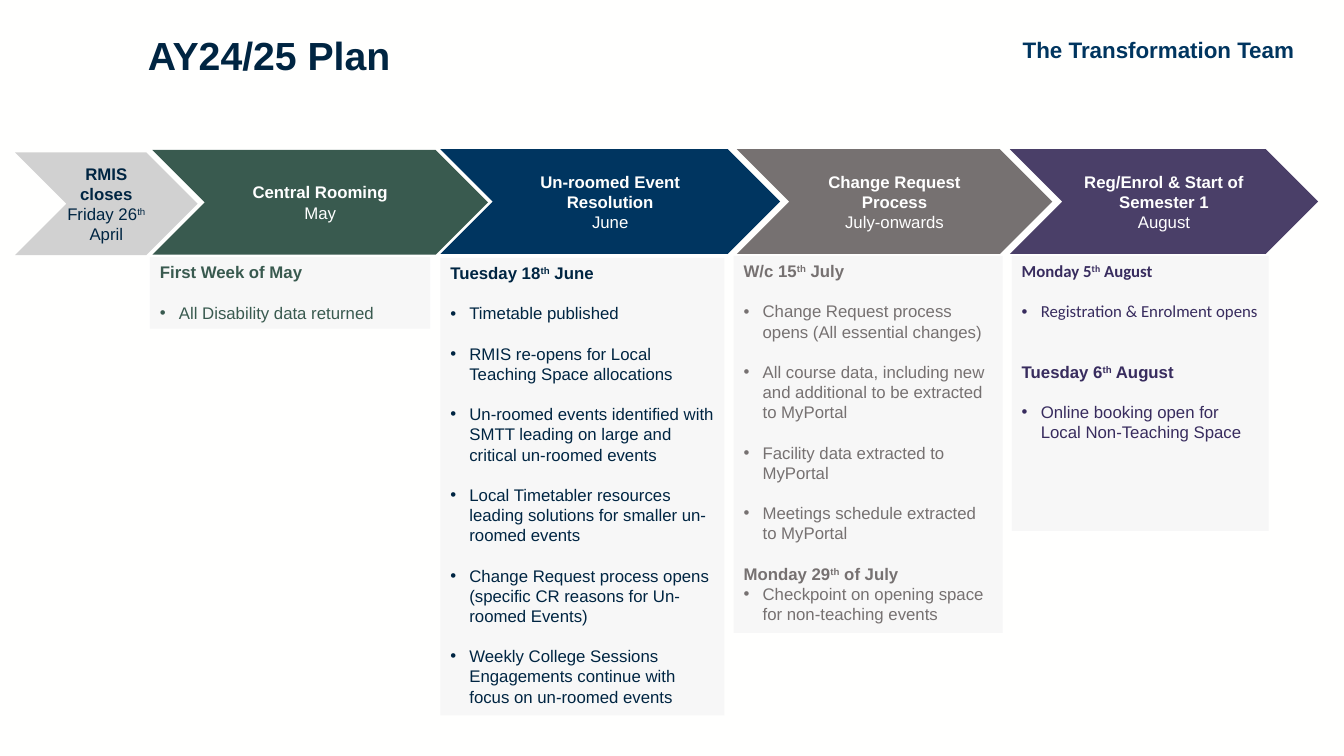
from typing import NamedTuple

from lxml import etree
from pptx import Presentation
from pptx.dml.color import RGBColor
from pptx.enum.shapes import MSO_SHAPE
from pptx.enum.text import MSO_ANCHOR, PP_ALIGN
from pptx.oxml.ns import qn
from pptx.util import Cm, Pt

CHEVRON, RECT = MSO_SHAPE.CHEVRON, MSO_SHAPE.RECTANGLE
TOP, MIDDLE = MSO_ANCHOR.TOP, MSO_ANCHOR.MIDDLE
LEFT, CENTER = PP_ALIGN.LEFT, PP_ALIGN.CENTER

PAPER, PANEL = "FFFFFE", "F7F7F7"
NAVY, BLUE, GREEN = "002542", "003560", "395A4F"
GREY, PURPLE, INDIGO = "767171", "4A3F68", "382C5E"
LINE = 14.4  # height of one text line in points
HANG = Cm(0.48)


class Box(NamedTuple):
    left: float
    top: float
    width: float
    height: float


class Step(NamedTuple):
    box: Box
    fill: str
    ink: str
    title: str
    date: str
    inset: float | None = None


class Line(NamedTuple):
    text: str  # text between carets is superscript
    head: bool = False
    gap: int = 1  # empty lines above
    font: str = "Arial"


class Panel(NamedTuple):
    box: Box
    ink: str
    lines: list[Line]


STEPS = [
    Step(Box(11.1, 3.76, 8.56, 2.64), BLUE, PAPER, "Un-roomed Event Resolution", "June"),
    Step(Box(18.57, 3.76, 7.95, 2.64), GREY, "FFFFFF", "Change Request Process", "July-onwards"),
    Step(Box(0.38, 3.84, 4.6, 2.59), "D1D1D1", NAVY, "RMIS closes", "Friday 26^th ^April", 0),
    Step(Box(3.84, 3.78, 8.46, 2.64), GREEN, "FFFFFF", "Central Rooming", "May"),
    Step(Box(25.45, 3.76, 7.77, 2.64), PURPLE, "FFFFFF", "Reg/Enrol & Start of Semester 1", "August"),
]

PANELS = [
    Panel(Box(3.78, 6.48, 7.06, 1.8), GREEN, [
        Line("First Week of May", True),
        Line("All Disability data returned"),
    ]),
    Panel(Box(11.1, 6.5, 7.16, 11.53), NAVY, [
        Line("Tuesday 18^th^ June", True),
        Line("Timetable published"),
        Line("RMIS re-opens for Local Teaching Space allocations"),
        Line("Un-roomed events identified with SMTT leading on large and critical un-roomed events"),
        Line("Local Timetabler resources leading solutions for smaller un-roomed events"),
        Line("Change Request process opens (specific CR reasons for Un-roomed Events)"),
        Line("Weekly College Sessions Engagements continue with focus on un-roomed events"),
    ]),
    Panel(Box(18.49, 6.45, 6.78, 9.5), GREY, [
        Line("W/c 15^th^ July", True),
        Line("Change Request process opens (All essential changes)"),
        Line("All course data, including new and additional to be extracted to MyPortal"),
        Line("Facility data extracted to MyPortal"),
        Line("Meetings schedule extracted to MyPortal"),
        Line("Monday 29^th^ of July", True),
        Line("Checkpoint on opening space for non-teaching events", gap=0),
    ]),
    Panel(Box(25.5, 6.45, 6.47, 6.93), INDIGO, [
        Line("Monday 5^th^ August", True, font="Calibri"),
        Line("Registration & Enrolment opens", font="Calibri"),
        Line("Tuesday 6^th^ August", True, gap=2),
        Line("Online booking open for Local Non-Teaching Space"),
    ]),
]


def color(code: str) -> RGBColor:
    return RGBColor.from_string(code)


def place(box: Box) -> list[int]:
    return [Cm(side) for side in box]


def add_runs(para, text: str, ink: str, bold: bool, size: float = 12, font: str = "Arial") -> None:
    for index, part in enumerate(text.split("^")):
        run = para.add_run()
        run.text = part
        run.font.name, run.font.size, run.font.bold = font, Pt(size), bold
        run.font.color.rgb = color(ink)
        if index % 2:
            run.font._element.set("baseline", "30000")


def add_bullet(para) -> None:
    props = para._p.get_or_add_pPr()
    props.set("marL", str(HANG))
    props.set("indent", str(-HANG))
    face = etree.SubElement(props, qn("a:buFont"))
    face.set("typeface", "Arial")
    mark = etree.SubElement(props, qn("a:buChar"))
    mark.set("char", "•")


def add_shape(slide, kind, box: Box, fill: str, anchor):
    shape = slide.shapes.add_shape(kind, *place(box))
    shape.shadow.inherit = False
    shape.fill.solid()
    shape.fill.fore_color.rgb = color(fill)
    shape.line.fill.background()
    frame = shape.text_frame
    frame.word_wrap = True
    frame.vertical_anchor = anchor
    return frame


def add_label(slide, box: Box, text: str, ink: str, size: float, align):
    frame = slide.shapes.add_textbox(*place(box)).text_frame
    frame.word_wrap = True
    para = frame.paragraphs[0]
    para.alignment = align
    add_runs(para, text, ink, True, size)
    return para


def add_step(slide, step: Step) -> None:
    frame = add_shape(slide, CHEVRON, step.box, step.fill, MIDDLE)
    if step.inset is not None:
        frame.margin_left = frame.margin_right = Cm(step.inset)
        frame.margin_top = frame.margin_bottom = Cm(step.inset)
    for para, text, bold in (
        (frame.paragraphs[0], step.title, True),
        (frame.add_paragraph(), step.date, False),
    ):
        para.alignment = CENTER
        add_runs(para, text, step.ink, bold)


def add_panel(slide, panel: Panel) -> None:
    frame = add_shape(slide, RECT, panel.box, PANEL, TOP)
    for index, line in enumerate(panel.lines):
        para = frame.add_paragraph() if index else frame.paragraphs[0]
        para.alignment = LEFT
        if index:
            para.space_before = Pt(LINE * line.gap)
        if not line.head:
            add_bullet(para)
        add_runs(para, line.text, panel.ink, line.head, font=line.font)


def main() -> None:
    deck = Presentation()
    deck.slide_width, deck.slide_height = Cm(33.87), Cm(19.05)
    slide = deck.slides.add_slide(deck.slide_layouts[6])
    slide.background.fill.solid()
    slide.background.fill.fore_color.rgb = color(PAPER)

    # Headings
    add_label(slide, Box(25.27, 0.79, 7.85, 0.94), "The Transformation Team", "00355F", 16, CENTER)
    title = add_label(slide, Box(3.48, 0.79, 18.39, 3.05), "AY24/25 Plan", NAVY, 28, LEFT)
    title.line_spacing = 0.9

    # Timeline arrows and the details below them
    for step in STEPS:
        add_step(slide, step)
    for panel in PANELS:
        add_panel(slide, panel)

    deck.save("out.pptx")


if __name__ == "__main__":
    main()
